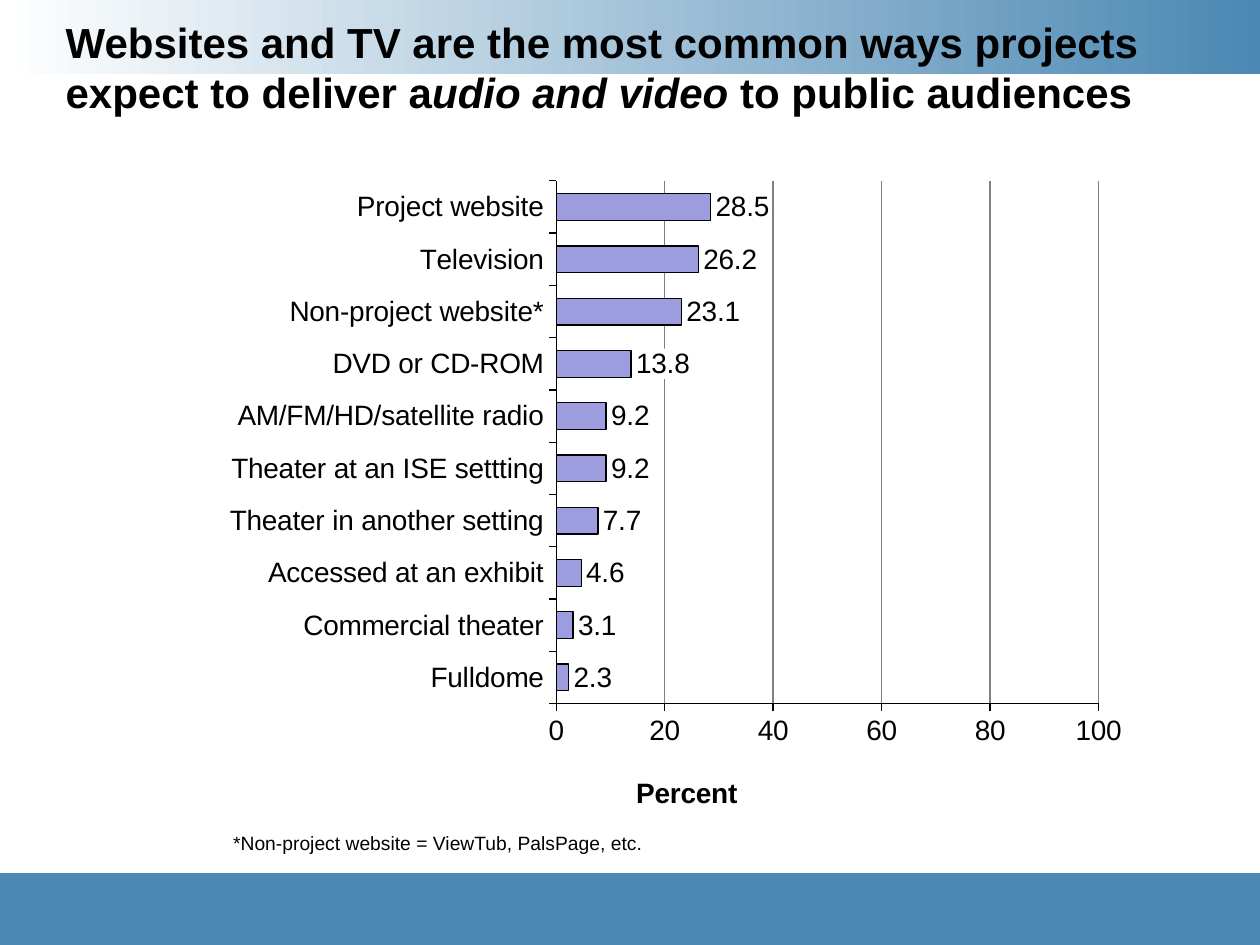
from lxml import etree
from pptx import Presentation
from pptx.chart.data import CategoryChartData
from pptx.dml.color import RGBColor
from pptx.enum.chart import XL_CHART_TYPE, XL_LABEL_POSITION, XL_TICK_MARK
from pptx.enum.shapes import MSO_SHAPE
from pptx.enum.text import MSO_ANCHOR, MSO_AUTO_SIZE, PP_ALIGN
from pptx.oxml import parse_xml
from pptx.oxml.ns import nsdecls, qn
from pptx.util import Cm, Pt

FONT = "Arial"
BLACK, WHITE, BLUE, LILAC, GREY = "000000", "FFFFFF", "4B88B3", "9C9CDF", "808080"
DELIVERY = [
    ("Fulldome", 2.3),
    ("Commercial theater", 3.1),
    ("Accessed at an exhibit", 4.6),
    ("Theater in another setting", 7.7),
    ("Theater at an ISE settting", 9.2),
    ("AM/FM/HD/satellite radio", 9.2),
    ("DVD or CD-ROM", 13.8),
    ("Non-project website*", 23.1),
    ("Television", 26.2),
    ("Project website", 28.5),
]


def colour(value):
    return RGBColor.from_string(value)


def lengths(box):
    return [Cm(value) for value in box]


def format_font(font, size, **settings):
    values = {"name": FONT, "size": Pt(size), "bold": False, **settings}
    for name, value in values.items():
        setattr(font, name, value)
    font.color.rgb = colour(BLACK)


def format_frame(frame, **settings):
    values = {"word_wrap": True, "vertical_anchor": MSO_ANCHOR.TOP, **settings}
    for name, value in values.items():
        setattr(frame, name, value)


def format_line(line, value):
    line.color.rgb = colour(value)
    line.width = Pt(0.75)


def add_band(page, box, start, end):
    band = page.shapes.add_shape(MSO_SHAPE.RECTANGLE, *lengths(box))
    band.shadow.inherit = False
    band.line.fill.background()
    if start == end:
        band.fill.solid()
        band.fill.fore_color.rgb = colour(start)
        return
    band.fill.gradient()
    band.fill.gradient_angle = 0
    for stop, value in zip(band.fill.gradient_stops, (start, end)):
        stop.color.rgb = colour(value)


def place_title(page, box):
    title = page.shapes.title
    title.left, title.top, title.width, title.height = lengths(box)
    page.shapes._spTree.append(title._element)
    format_frame(title.text_frame, auto_size=MSO_AUTO_SIZE.NONE)
    para = title.text_frame.paragraphs[0]
    para.alignment = PP_ALIGN.LEFT
    pieces = [
        ("Websites and TV are the most common ways projects expect to deliver a", False),
        ("udio and video", True),
        (" to public audiences", False),
    ]
    for text, italic in pieces:
        span = para.add_run()
        span.text = text
        format_font(span.font, 24, bold=True, italic=italic)


def set_layout(parent, position, **values):
    for old in parent.findall(qn("c:layout")):
        parent.remove(old)
    layout = parse_xml(f"<c:layout {nsdecls('c')}><c:manualLayout/></c:layout>")
    for name, value in values.items():
        etree.SubElement(layout[0], qn(f"c:{name}"), val=str(value))
    parent.insert(position, layout)


def format_axis(axis):
    axis.major_tick_mark = XL_TICK_MARK.OUTSIDE
    axis.minor_tick_mark = XL_TICK_MARK.NONE
    format_line(axis.format.line, BLACK)
    format_font(axis.tick_labels.font, 16)


def format_value_axis(axis):
    format_axis(axis)
    scale = {"minimum_scale": 0, "maximum_scale": 100, "major_unit": 20,
             "has_major_gridlines": True}
    for name, value in scale.items():
        setattr(axis, name, value)
    format_line(axis.major_gridlines.format.line, GREY)
    frame = axis.axis_title.text_frame
    frame.text = "Percent"
    format_font(frame.paragraphs[0].runs[0].font, 16, bold=True)
    set_layout(axis.axis_title._element, 1, xMode="edge", yMode="edge", x=0.45, y=0.91)


def format_labels(labels):
    labels.show_value = True
    labels.position = XL_LABEL_POSITION.OUTSIDE_END
    labels.number_format = "0.0"
    labels.number_format_is_linked = False
    format_font(labels.font, 16)
    backing = parse_xml(
        f'<c:spPr {nsdecls("c", "a")}><a:solidFill><a:srgbClr val="{WHITE}"/>'
        "</a:solidFill></c:spPr>")
    labels._element.find(qn("c:txPr")).addprevious(backing)


def add_delivery_chart(page, box):
    data = CategoryChartData()
    data.categories = [name for name, _ in DELIVERY]
    data.add_series("Series 1", [value for _, value in DELIVERY])
    chart = page.shapes.add_chart(XL_CHART_TYPE.BAR_CLUSTERED, *lengths(box), data).chart
    chart.has_legend = False
    chart.has_title = False
    format_font(chart.font, 16)
    format_axis(chart.category_axis)
    format_value_axis(chart.value_axis)
    plot = chart.plots[0]
    plot.gap_width = 96
    plot.vary_by_categories = False
    series = plot.series[0]
    series.format.fill.solid()
    series.format.fill.fore_color.rgb = colour(LILAC)
    format_line(series.format.line, BLACK)
    format_labels(series.data_labels)
    set_layout(plot._element.getparent(), 0, layoutTarget="inner", xMode="edge",
               yMode="edge", x=0.37, y=0.02, w=0.58, h=0.79)


def add_footnote(page, box):
    frame = page.shapes.add_textbox(*lengths(box)).text_frame
    format_frame(frame, auto_size=MSO_AUTO_SIZE.SHAPE_TO_FIT_TEXT)
    span = frame.paragraphs[0].add_run()
    span.text = "*Non-project website = ViewTub, PalsPage, etc."
    format_font(span.font, 11)


def main():
    deck = Presentation()
    deck.slide_width, deck.slide_height = Cm(25.4), Cm(19.05)
    page = deck.slides.add_slide(deck.slide_layouts[5])
    add_band(page, (0, 0, 25.4, 1.5), WHITE, BLUE)
    add_band(page, (0, 17.6, 25.4, 1.45), BLUE, BLUE)
    place_title(page, (1.07, 0.2, 23.93, 1.85))
    add_delivery_chart(page, (4.24, 3.38, 18.85, 13.34))
    add_footnote(page, (4.45, 16.64, 17.98, 0.74))
    deck.save("out.pptx")


if __name__ == "__main__":
    main()
